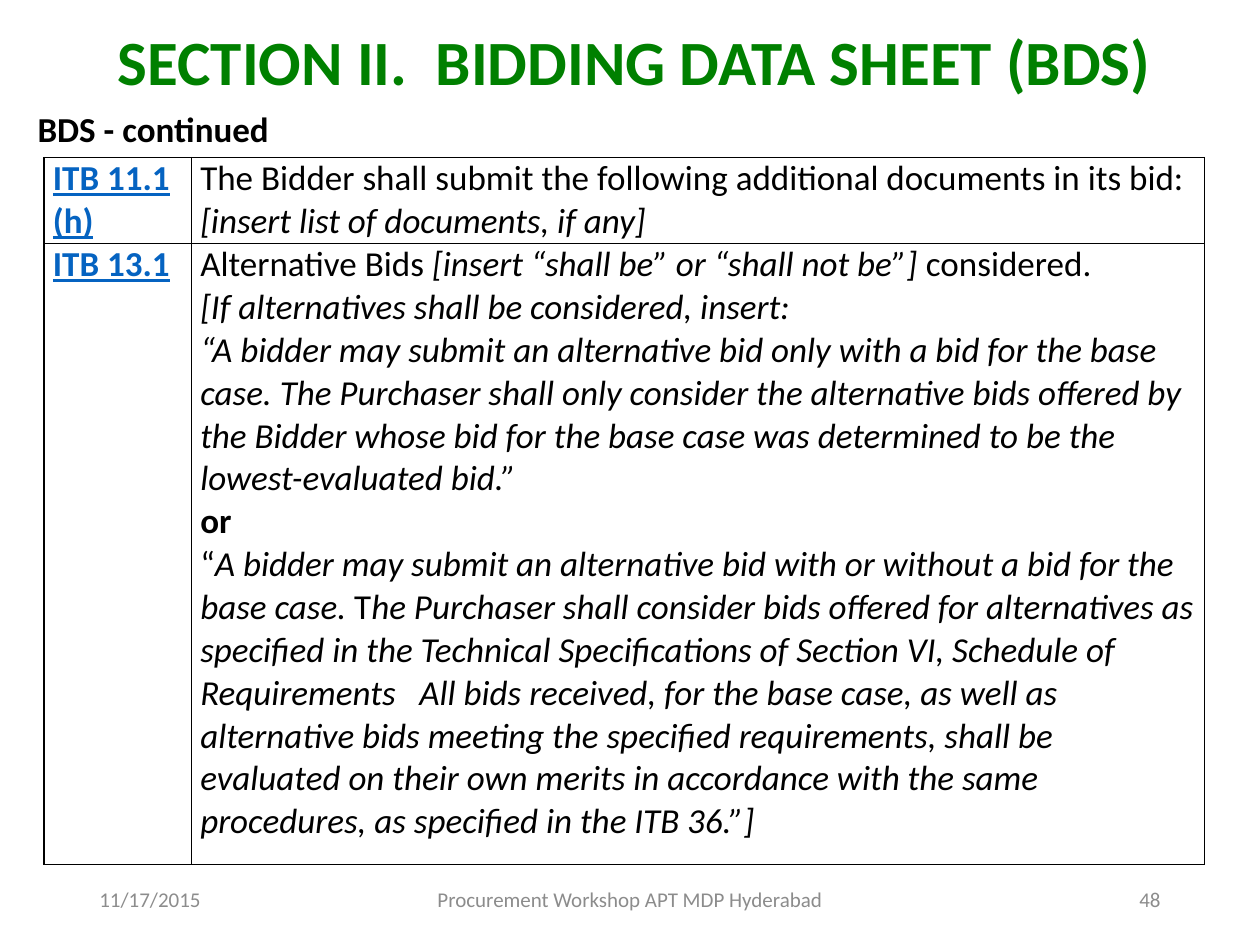
import dataclasses

import pptx
import pptx.dml.color
import pptx.enum.text
import pptx.oxml
import pptx.oxml.ns
import pptx.util

RGB = pptx.dml.color.RGBColor
Inches = pptx.util.Inches
Pt = pptx.util.Pt
ALIGN = pptx.enum.text.PP_ALIGN
ANCHOR = pptx.enum.text.MSO_ANCHOR

GREEN = RGB(0x00, 0x80, 0x00)
BLACK = RGB(0x00, 0x00, 0x00)
BLUE = RGB(0x05, 0x63, 0xC1)
GRAY = RGB(0x8C, 0x8C, 0x8C)
FONT = "Calibri"


@dataclasses.dataclass
class Span:
    text: str
    italic: bool = False
    bold: bool = False
    link: bool = False


@dataclasses.dataclass
class Label:
    text: str
    left: float
    top: float
    width: float
    height: float
    size: int
    color: RGB
    align: ALIGN = ALIGN.LEFT
    anchor: ANCHOR = ANCHOR.MIDDLE
    bold: bool = False


TITLE = Label("SECTION II.  BIDDING DATA SHEET (BDS)", 0.35, 0.29, 9.37, 0.55,
              36, GREEN, ALIGN.CENTER, ANCHOR.BOTTOM, True)
LABELS = [
    Label("BDS - continued", 0.2, 0.84, 9.53, 0.4, 20, BLACK,
          anchor=ANCHOR.TOP, bold=True),
    Label("11/17/2015", 0.69, 6.95, 2.25, 0.4, 12, GRAY),
    Label("Procurement Workshop APT MDP Hyderabad", 3.31, 6.95, 3.38, 0.4,
          12, GRAY, ALIGN.CENTER),
    Label("48", 7.06, 6.95, 2.25, 0.4, 12, GRAY, ALIGN.RIGHT),
]

# Rows hold cells, cells hold paragraphs, paragraphs hold spans.
ROWS = [
    [
        [[Span("ITB 11.1 (h)", bold=True, link=True)]],
        [[Span("The Bidder shall submit the following additional documents "
               "in its bid: "),
          Span("[insert list of documents, if any]", italic=True)]],
    ],
    [
        [[Span("ITB 13.1", bold=True, link=True)]],
        [
            [Span("Alternative Bids "),
             Span("[insert “shall be” or “shall not be”]", italic=True),
             Span(" considered.")],
            [Span("[If alternatives shall be considered, insert:", italic=True)],
            [Span("“A bidder may submit an alternative bid only with a bid "
                  "for the base case. The Purchaser shall only consider the "
                  "alternative bids offered by the Bidder whose bid for the "
                  "base case was determined to be the lowest-evaluated bid.”",
                  italic=True)],
            [Span("or", bold=True)],
            [Span("“"),
             Span("A bidder may submit an alternative bid with or without a "
                  "bid for the base case.", italic=True),
             Span(" T"),
             Span("he Purchaser shall consider bids offered for alternatives "
                  "as specified in the Technical Specifications of Section "
                  "VI, Schedule of Requirements   All bids received, for the "
                  "base case, as well as alternative bids meeting the "
                  "specified requirements, shall be evaluated on their own "
                  "merits in accordance with the same procedures, as "
                  "specified in the ITB 36.”]", italic=True)],
        ],
    ],
]
COLS = [1.17, 8.04]
HEIGHTS = [0.68, 4.93]


def style(font: pptx.text.text.Font, size: int, color: RGB, bold: bool) -> None:
    font.name = FONT
    font.size = Pt(size)
    font.color.rgb = color
    font.bold = bold


def write(shape: pptx.shapes.base.BaseShape, label: Label) -> None:
    """Place a shape and fill it with its label."""
    shape.left, shape.top = Inches(label.left), Inches(label.top)
    shape.width, shape.height = Inches(label.width), Inches(label.height)
    frame = shape.text_frame
    frame.text = label.text
    frame.word_wrap = True
    frame.auto_size = pptx.enum.text.MSO_AUTO_SIZE.NONE
    frame.vertical_anchor = label.anchor
    para = frame.paragraphs[0]
    para.alignment = label.align
    para.line_spacing = 0.9
    style(para.runs[0].font, label.size, label.color, label.bold)


def border(cell: pptx.table._Cell) -> None:
    props = cell._tc.get_or_add_tcPr()
    space = pptx.oxml.ns.nsdecls("a")
    for i, side in enumerate("LRTB"):
        props.insert(i, pptx.oxml.parse_xml(
            f'<a:ln{side} {space} w="12700"><a:solidFill>'
            f'<a:srgbClr val="{BLACK}"/></a:solidFill></a:ln{side}>'))


def fill(cell: pptx.table._Cell, paras: list[list[Span]]) -> None:
    cell.fill.background()
    border(cell)
    cell.margin_left = cell.margin_right = Inches(0.07)
    cell.margin_top = cell.margin_bottom = 0
    frame = cell.text_frame
    for i, spans in enumerate(paras):
        para = frame.add_paragraph() if i else frame.paragraphs[0]
        for span in spans:
            run = para.add_run()
            run.text = span.text
            style(run.font, 20, BLUE if span.link else BLACK, span.bold)
            run.font.italic = span.italic
            run.font.underline = span.link


def main() -> None:
    deck = pptx.Presentation()
    deck.slide_width, deck.slide_height = Inches(10), Inches(7.5)
    slide = deck.slides.add_slide(deck.slide_layouts[5])
    write(slide.shapes.title, TITLE)
    for label in LABELS:
        write(slide.shapes.add_textbox(0, 0, 0, 0), label)

    table = slide.shapes.add_table(
        len(ROWS), len(COLS), Inches(0.35), Inches(1.25),
        Inches(sum(COLS)), Inches(sum(HEIGHTS))).table
    table.first_row = table.horz_banding = False
    for col, width in zip(table.columns, COLS):
        col.width = Inches(width)
    for row, height, cells in zip(table.rows, HEIGHTS, ROWS):
        row.height = Inches(height)
        for cell, paras in zip(row.cells, cells):
            fill(cell, paras)
    deck.save("out.pptx")


if __name__ == "__main__":
    main()
